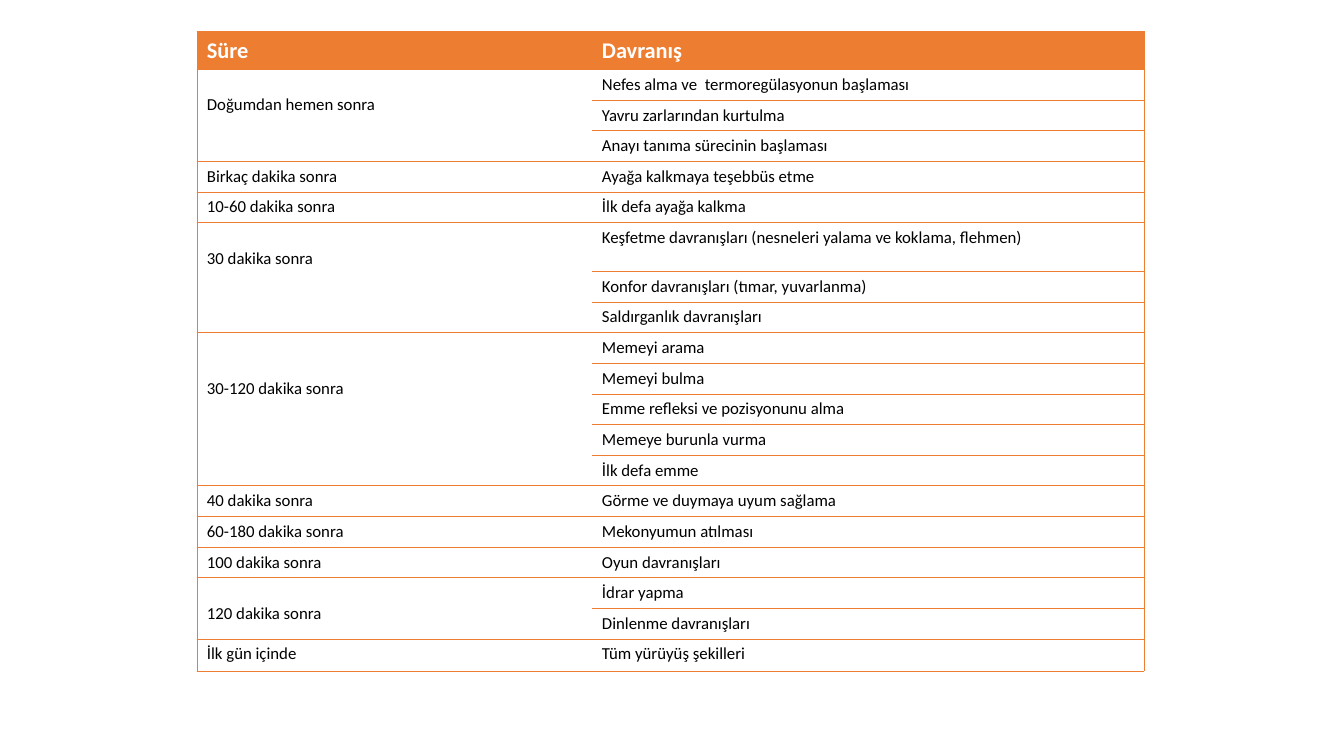
from pptx import Presentation
from pptx.dml.color import RGBColor
from pptx.oxml.ns import qn
from pptx.util import Pt
from lxml import etree

ORANGE, WHITE, BLACK = "ED7D31", "FFFFFF", "000000"
BLANK_LAYOUT = 6
HEADER_HEIGHT, ROW_HEIGHT, TALL_HEIGHT, LAST_HEIGHT = 27, 21.9, 34.8, 23
MARGIN, TEXT_LINE = 3.6, 14.65

# time, lines the time label is pushed down, behaviours
STAGES = [
    ("Doğumdan hemen sonra", 1, ["Nefes alma ve  termoregülasyonun başlaması",
                                 "Yavru zarlarından kurtulma",
                                 "Anayı tanıma sürecinin başlaması"]),
    ("Birkaç dakika sonra", 0, ["Ayağa kalkmaya teşebbüs etme"]),
    ("10-60 dakika sonra", 0, ["İlk defa ayağa kalkma"]),
    ("30 dakika sonra", 1, ["Keşfetme davranışları (nesneleri yalama ve koklama, flehmen)",
                            "Konfor davranışları (tımar, yuvarlanma)",
                            "Saldırganlık davranışları"]),
    ("30-120 dakika sonra", 2, ["Memeyi arama", "Memeyi bulma",
                                "Emme refleksi ve pozisyonunu alma",
                                "Memeye burunla vurma", "İlk defa emme"]),
    ("40 dakika sonra", 0, ["Görme ve duymaya uyum sağlama"]),
    ("60-180 dakika sonra", 0, ["Mekonyumun atılması"]),
    ("100 dakika sonra", 0, ["Oyun davranışları"]),
    ("120 dakika sonra", 1, ["İdrar yapma", "Dinlenme davranışları"]),
    ("İlk gün içinde", 0, ["Tüm yürüyüş şekilleri"]),
]


def set_borders(cell, sides):
    """Draw orange lines on the given sides (letters of LRTB) and none on the others."""
    properties = cell._tc.get_or_add_tcPr()
    for side in "LRTB":
        line = etree.SubElement(properties, qn("a:ln" + side), w=str(Pt(0.5)))
        if side in sides:
            fill = etree.SubElement(line, qn("a:solidFill"))
            etree.SubElement(fill, qn("a:srgbClr"), val=ORANGE)
        else:
            etree.SubElement(line, qn("a:noFill"))


def write_cell(cell, text, size, color, bold=False):
    cell.text_frame.text = text
    font = cell.text_frame.paragraphs[0].runs[0].font
    font.name, font.size, font.bold = "Calibri", Pt(size), bold
    font.color.rgb = RGBColor.from_string(color)


deck = Presentation()
deck.slide_width, deck.slide_height = Pt(960), Pt(540)
page = deck.slides.add_slide(deck.slide_layouts[BLANK_LAYOUT])

row_count = 1 + sum(len(behaviours) for _, _, behaviours in STAGES)
frame = page.shapes.add_table(row_count, 2, Pt(140.6), Pt(22.6), Pt(676.6), Pt(451.4))
table = frame.table
table.horz_banding = False
table.columns[0].width, table.columns[1].width = Pt(282.2), Pt(394.4)
for row in table.rows:
    row.height = Pt(ROW_HEIGHT)
table.rows[0].height = Pt(HEADER_HEIGHT)
table.rows[row_count - 1].height = Pt(LAST_HEIGHT)

for column, heading in enumerate(["Süre", "Davranış"]):
    cell = table.cell(0, column)
    write_cell(cell, heading, 16, WHITE, bold=True)
    set_borders(cell, "LTB" if column == 0 else "RTB")
    cell.fill.solid()
    cell.fill.fore_color.rgb = RGBColor.from_string(ORANGE)

top_row = 1
for time, lines_down, behaviours in STAGES:
    for offset, behaviour in enumerate(behaviours):
        time_cell = table.cell(top_row + offset, 0)
        behaviour_cell = table.cell(top_row + offset, 1)
        write_cell(behaviour_cell, behaviour, 12, BLACK)
        set_borders(time_cell, "L" if offset else "LTB")
        set_borders(behaviour_cell, "RTB")
        time_cell.fill.background()
        behaviour_cell.fill.background()
        if behaviour.startswith("Keşfetme"):
            table.rows[top_row + offset].height = Pt(TALL_HEIGHT)
    time_cell = table.cell(top_row, 0)
    write_cell(time_cell, time, 12, BLACK)
    time_cell.margin_top = Pt(MARGIN + lines_down * TEXT_LINE)
    if len(behaviours) > 1:
        time_cell.merge(table.cell(top_row + len(behaviours) - 1, 0))
    top_row += len(behaviours)

deck.save("out.pptx")
